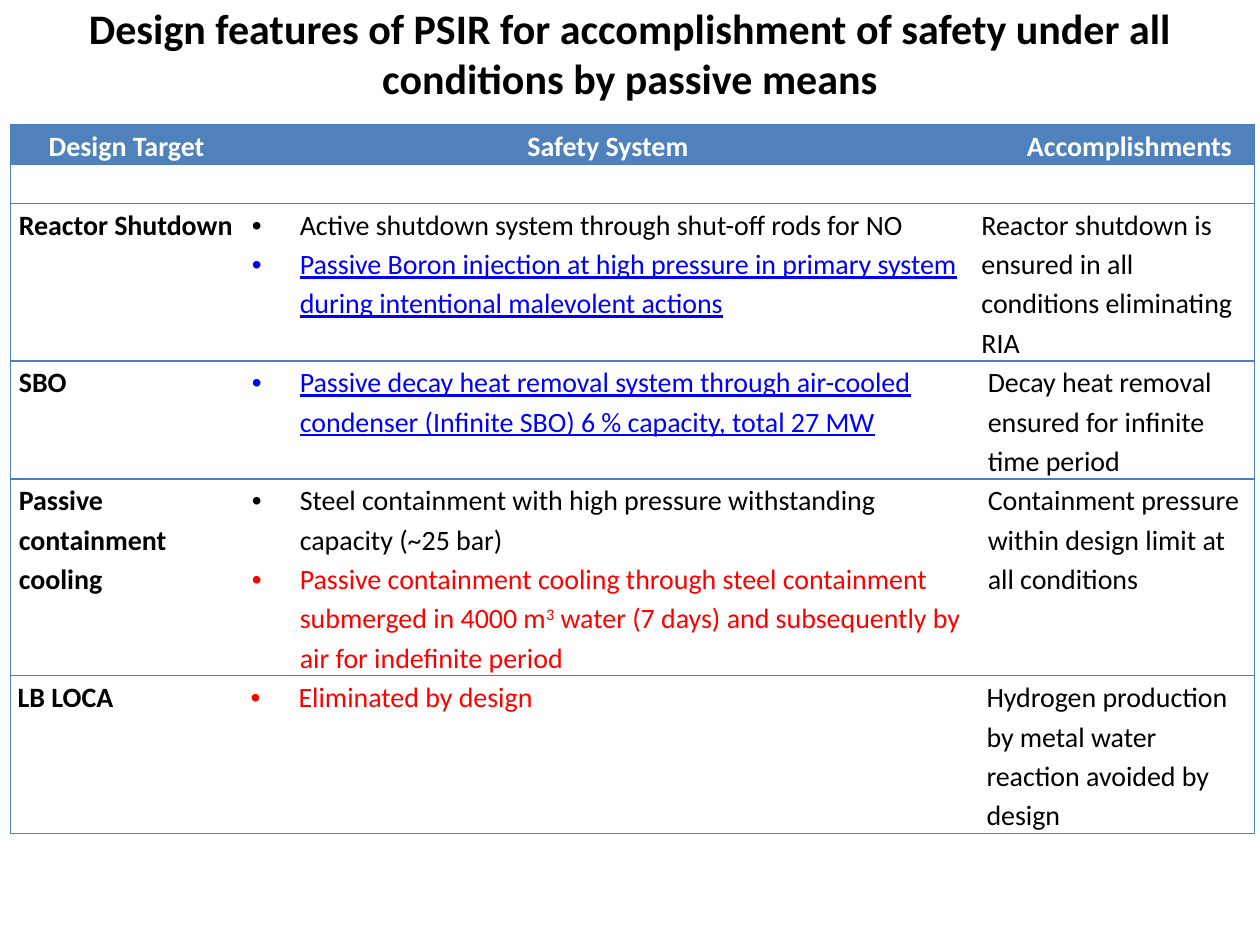
import pptx
import pptx.dml.color
import pptx.enum.text
import pptx.oxml
import pptx.oxml.ns
import pptx.util
from lxml import etree

RGBColor = pptx.dml.color.RGBColor
Inches = pptx.util.Inches
Align = pptx.enum.text.PP_ALIGN

BLACK = RGBColor(0x00, 0x00, 0x00)
WHITE = RGBColor(0xFF, 0xFF, 0xFF)
BLUE = RGBColor(0x00, 0x00, 0xFF)
RED = RGBColor(0xFF, 0x00, 0x00)
HEADER = RGBColor(0x4F, 0x81, 0xBD)
BORDER = RGBColor(0x4B, 0x7E, 0xBC)

COLUMNS = [1.85, 5.79, 2.24]
ROW_LINES = [1, 1, 4, 3, 5, 4]  # lines of text that each row holds
LINE_HEIGHT = pptx.util.Pt(22.5)


def write(paragraph, text, size=16, color=BLACK, bold=False, underline=False,
          align=Align.LEFT, spacing=1.15, indent=0, bullet=False):
    """Fill a paragraph; text between two carets becomes superscript."""
    paragraph.alignment = align
    paragraph.line_spacing = spacing
    properties = paragraph._p.get_or_add_pPr()
    properties.set("marL", str(Inches(0.38 if bullet else indent)))
    properties.set("indent", str(Inches(-0.38 if bullet else 0)))
    if bullet:
        for tag, key, value in (("a:buFont", "typeface", "Arial"), ("a:buChar", "char", "•")):
            etree.SubElement(properties, pptx.oxml.ns.qn(tag)).set(key, value)
    for number, part in enumerate(text.split("^")):
        span = paragraph.add_run()
        span.text = part
        span.font.name = "Calibri"
        span.font.size = pptx.util.Pt(size)
        span.font.bold = bold
        span.font.underline = underline
        span.font.color.rgb = color
        if number % 2:
            span.font._element.set("baseline", "30000")


def set_borders(cell, visible):
    properties = cell._tc.get_or_add_tcPr()
    for position, side in enumerate("LRTB"):
        paint = f'<a:solidFill><a:srgbClr val="{BORDER}"/></a:solidFill>' if side in visible else "<a:noFill/>"
        properties.insert(position, pptx.oxml.parse_xml(
            f'<a:ln{side} {pptx.oxml.ns.nsdecls("a")} w="9525">{paint}</a:ln{side}>'))


deck = pptx.Presentation()
deck.slide_width, deck.slide_height = Inches(10), Inches(7.5)
page = deck.slides.add_slide(deck.slide_layouts[6])

title = page.shapes.add_textbox(0, 0, deck.slide_width, Inches(0.84)).text_frame
title.word_wrap = True
title.vertical_anchor = pptx.enum.text.MSO_ANCHOR.MIDDLE
write(title.paragraphs[0],
      "Design features of PSIR for accomplishment of safety under all conditions by passive means",
      size=24, bold=True, align=Align.CENTER, spacing=1.0)

# Each row: design target, safety systems with their format, accomplishment, its indent
passive = dict(color=BLUE, underline=True)
features = [
    ("Reactor Shutdown",
     [("Active shutdown system through shut-off rods for NO", {}),
      ("Passive Boron injection at high pressure in primary system during intentional malevolent actions", passive)],
     "Reactor shutdown is ensured in all conditions eliminating RIA", 0),
    ("SBO",
     [("Passive decay heat removal system through air-cooled condenser (Infinite SBO) 6 % capacity, total 27 MW",
       passive)],
     "Decay heat removal ensured for infinite time period", 0.05),
    ("Passive containment cooling",
     [("Steel containment with high pressure withstanding capacity (~25 bar)", {}),
      ("Passive containment cooling through steel containment submerged in 4000 m^3^ water (7 days) "
       "and subsequently by air for indefinite period", dict(color=RED))],
     "Containment pressure within design limit at all conditions", 0.05),
    ("LB LOCA",
     [("Eliminated by design", dict(color=RED))],
     "Hydrogen production by metal water reaction avoided by design", 0.05),
]

table = page.shapes.add_table(
    len(ROW_LINES), len(COLUMNS), Inches(0.08), Inches(0.99),
    Inches(sum(COLUMNS)), LINE_HEIGHT * sum(ROW_LINES)).table
table.first_row = table.horz_banding = False
for column, width in zip(table.columns, COLUMNS):
    column.width = Inches(width)

for row_number, lines in enumerate(ROW_LINES):
    table.rows[row_number].height = LINE_HEIGHT * lines
    for column_number, outer_side in enumerate(["L", "", "R"]):
        cell = table.cell(row_number, column_number)
        cell.margin_top = cell.margin_bottom = 0
        cell.margin_left = cell.margin_right = Inches(0.06 if row_number == 5 else 0.07)
        if row_number == 0:
            cell.fill.solid()
            cell.fill.fore_color.rgb = HEADER
        else:
            cell.fill.background()
        set_borders(cell, "TB" + outer_side)

for column_number, heading in enumerate(["Design Target", "Safety System", "Accomplishments"]):
    write(table.cell(0, column_number).text_frame.paragraphs[0], heading, color=WHITE, bold=True,
          align=Align.CENTER, indent=0.25 if column_number == 2 else 0)

for row_number, (target, systems, accomplishment, indent) in enumerate(features, start=2):
    target_frame, system_frame, result_frame = (
        table.cell(row_number, column_number).text_frame for column_number in range(3))
    write(target_frame.paragraphs[0], target, bold=True)
    for number, (text, style) in enumerate(systems):
        paragraph = system_frame.add_paragraph() if number else system_frame.paragraphs[0]
        write(paragraph, text, bullet=True, **style)
    write(result_frame.paragraphs[0], accomplishment, indent=indent)

deck.save("out.pptx")
